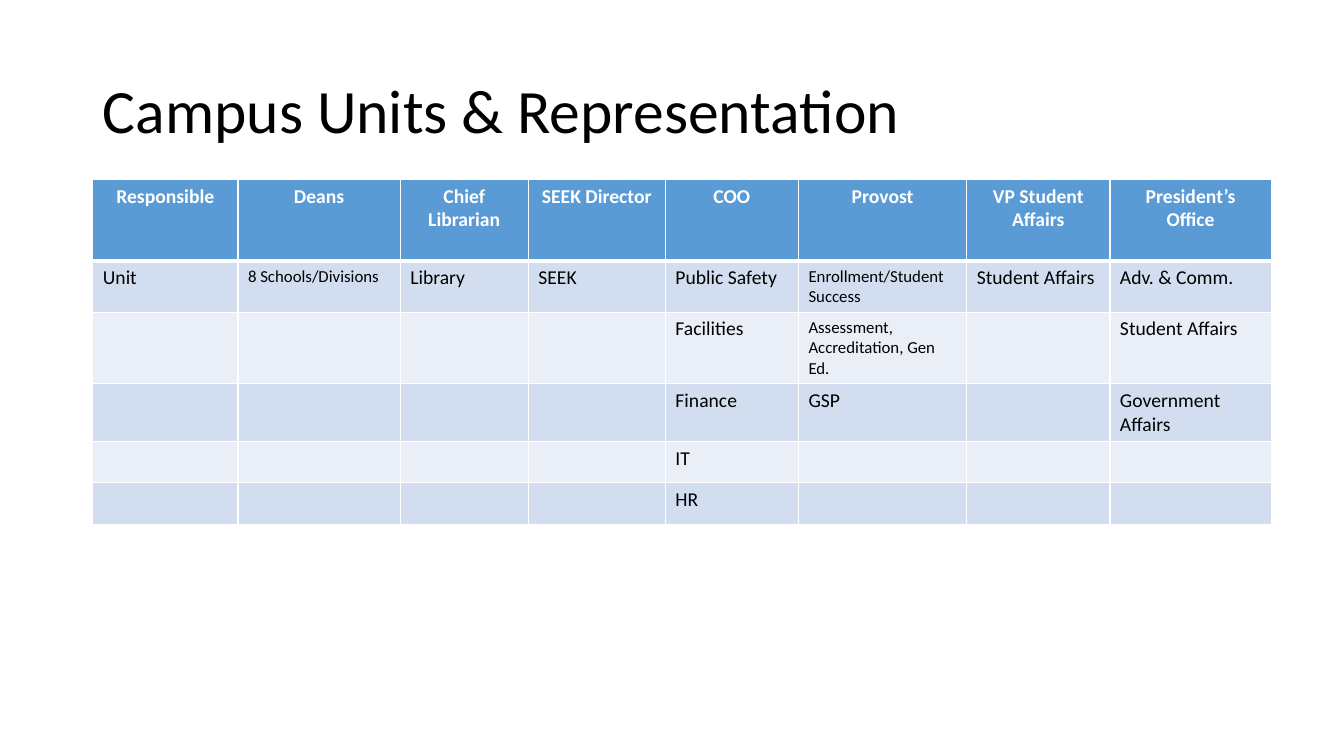
from lxml import etree
from pptx import Presentation
from pptx import util as u
from pptx.dml.color import RGBColor
from pptx.enum import text
from pptx.oxml.ns import qn

TITLE = "Campus Units & Representation"
HEADER = ["Responsible", "Deans", "Chief Librarian", "SEEK Director", "COO",
          "Provost", "VP Student Affairs", "President’s Office"]
UNITS = [
    ["Unit", "8 Schools/Divisions", "Library", "SEEK", "Public Safety",
     "Enrollment/Student Success", "Student Affairs", "Adv. & Comm."],
    ["", "", "", "", "Facilities", "Assessment, Accreditation, Gen Ed.", "", "Student Affairs"],
    ["", "", "", "", "Finance", "GSP", "", "Government Affairs"],
    ["", "", "", "", "IT", "", "", ""],
    ["", "", "", "", "HR", "", "", ""],
]
SMALL = {"8 Schools/Divisions", "Enrollment/Student Success",
         "Assessment, Accreditation, Gen Ed."}

PX = 9144  # 100 px to the inch
SLIDE_W, SLIDE_H = 1333, 750
TITLE_BOX = (92, 40, 1150, 145)
TABLE_LEFT, TABLE_TOP = 92, 178
COL_WIDTHS = [144, 161, 127, 136, 132, 167, 142, 160]
HEADER_H, ROW_H = 81, 41

FONT = "Calibri"
BLACK = RGBColor(0x00, 0x00, 0x00)
WHITE = RGBColor(0xFF, 0xFF, 0xFF)
HEADER_BLUE = RGBColor(0x5B, 0x9B, 0xD5)
BANDS = [RGBColor(0xD2, 0xDE, 0xEF), RGBColor(0xEA, 0xEF, 0xF7)]


def format_runs(p, size, color, bold=False):
    for r in p.runs:
        r.font.name = FONT
        r.font.size = u.Pt(size)
        r.font.bold = bold
        r.font.color.rgb = color


def add_borders(cell, top, bottom):
    """White lines on all four sides; top and bottom are widths in points."""
    tc_pr = cell._tc.get_or_add_tcPr()
    for side, width in (("L", 1), ("R", 1), ("T", top), ("B", bottom)):
        ln = etree.SubElement(tc_pr, qn(f"a:ln{side}"), w=str(u.Pt(width)))
        fill = etree.SubElement(ln, qn("a:solidFill"))
        etree.SubElement(fill, qn("a:srgbClr"), val=str(WHITE))


def add_title(s):
    sp = s.shapes.title
    sp.left, sp.top, sp.width, sp.height = (v * PX for v in TITLE_BOX)
    tf = sp.text_frame
    tf.text = TITLE
    tf.word_wrap = True
    tf.vertical_anchor = text.MSO_ANCHOR.MIDDLE
    p = tf.paragraphs[0]
    p.alignment = text.PP_ALIGN.LEFT
    p.line_spacing = 0.9
    format_runs(p, 44, BLACK)


def add_units_table(s):
    rows = [HEADER] + UNITS
    heights = [HEADER_H] + [ROW_H] * len(UNITS)
    table = s.shapes.add_table(
        len(rows), len(HEADER), TABLE_LEFT * PX, TABLE_TOP * PX,
        sum(COL_WIDTHS) * PX, sum(heights) * PX).table
    for col, width in zip(table.columns, COL_WIDTHS):
        col.width = width * PX
    for i, (labels, height) in enumerate(zip(rows, heights)):
        table.rows[i].height = height * PX
        is_header = i == 0
        for j, label in enumerate(labels):
            cell = table.cell(i, j)
            add_borders(cell, top=3 if i == 1 else 1, bottom=3 if is_header else 1)
            cell.fill.solid()
            cell.fill.fore_color.rgb = HEADER_BLUE if is_header else BANDS[(i - 1) % 2]
            if not label:
                continue
            cell.text_frame.text = label
            p = cell.text_frame.paragraphs[0]
            p.alignment = text.PP_ALIGN.CENTER if is_header else text.PP_ALIGN.LEFT
            format_runs(p, 12 if label in SMALL else 14,
                        WHITE if is_header else BLACK, is_header)


def main():
    prs = Presentation()
    prs.slide_width, prs.slide_height = SLIDE_W * PX, SLIDE_H * PX
    s = prs.slides.add_slide(prs.slide_layouts[5])
    add_title(s)
    add_units_table(s)
    prs.save("out.pptx")


if __name__ == "__main__":
    main()
